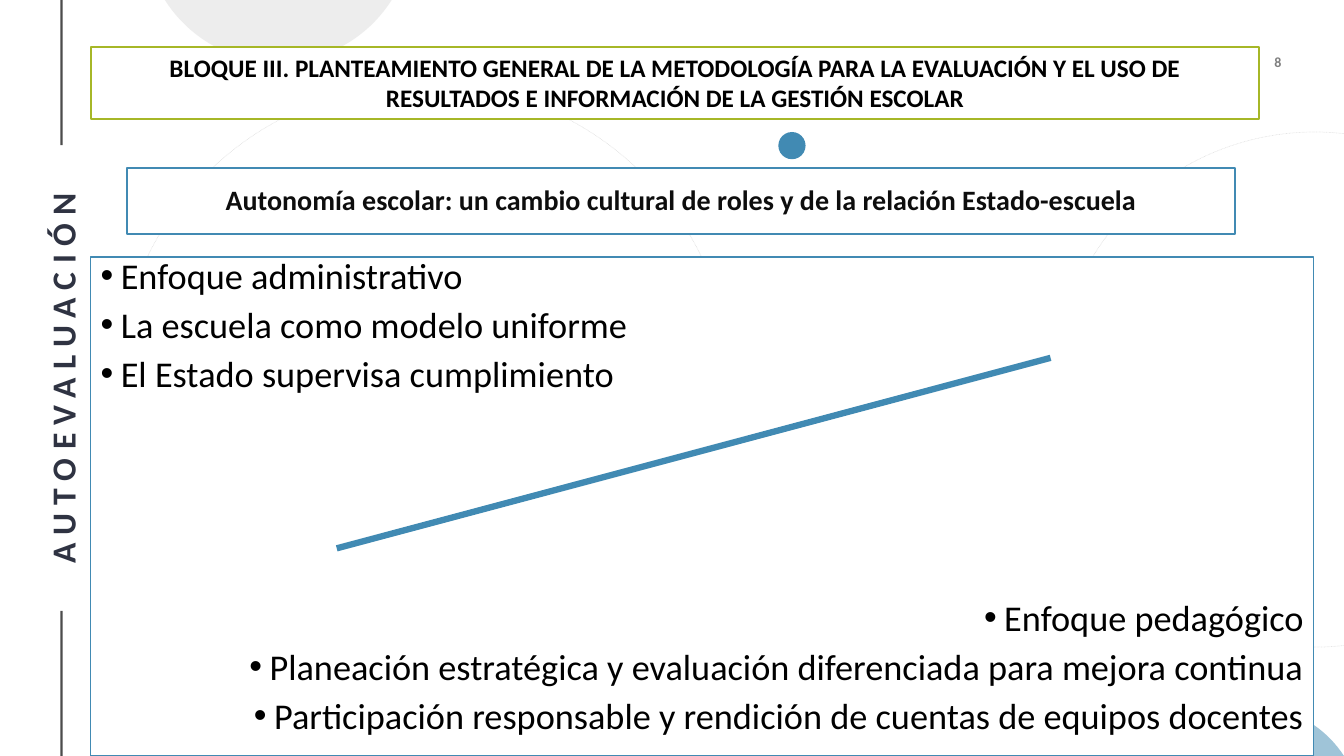
import math
import lxml.etree
import pptx
import pptx.util
import pptx.dml.color
import pptx.enum.dml
import pptx.enum.shapes
import pptx.enum.text
import pptx.oxml.ns

W, H = 13.33, 7.5
FONT = "Calibri"
BLACK, WHITE, BLUE, GREEN, GREY = "000000", "FFFFFF", "418AB3", "A6B727", "DDDDDD"

BLOCK = ("BLOQUE III. PLANTEAMIENTO GENERAL DE LA METODOLOGÍA PARA LA EVALUACIÓN Y EL USO DE "
         "RESULTADOS E INFORMACIÓN DE LA GESTIÓN ESCOLAR")
TITLE = "Autonomía escolar: un cambio cultural de roles y de la relación Estado-escuela"
BEFORE = ["Enfoque administrativo", "La escuela como modelo uniforme", "El Estado supervisa cumplimiento"]
AFTER = ["Enfoque pedagógico",
         "Planeación estratégica y evaluación diferenciada para mejora continua",
         "Participación responsable y rendición de cuentas de equipos docentes"]
SIDEBAR, PAGE = "AUTOEVALUACIÓN", "8"

RAIL_X = 0.61
RAILS = [(RAIL_X, 6.06, RAIL_X, H), (RAIL_X, 0, RAIL_X, 1.44)]
RINGS = [(10.47, 1.31, 5.14, 5.11), (1.16, 0.83, 6.1, 6.07)]
CAPS = [(12.41, H, 1.84, -0.5, BLUE), (2.76, 0, 2.25, 0.62, GREY)]
ITEM_GAP, GROUP_GAP = 10, 149.4

SHAPE = pptx.enum.shapes.MSO_SHAPE
ALIGN = pptx.enum.text.PP_ALIGN
ANCHOR = pptx.enum.text.MSO_ANCHOR
FIT = pptx.enum.text.MSO_AUTO_SIZE.SHAPE_TO_FIT_TEXT
qn = pptx.oxml.ns.qn
inch = pptx.util.Inches

prs = pptx.Presentation()
prs.slide_width, prs.slide_height = inch(W), inch(H)
s = prs.slides.add_slide(prs.slide_layouts[6])


def paint(fmt, color, alpha=100):
    fmt.solid()
    fmt.fore_color.rgb = pptx.dml.color.RGBColor.from_string(color)
    if alpha < 100:
        clr = fmt._xPr.find(qn("a:solidFill"))[0]
        lxml.etree.SubElement(clr, qn("a:alpha")).set("val", str(alpha * 1000))


def style(sp, fill=None, line=None, width=1, fill_alpha=100, line_alpha=100):
    sp.shadow.inherit = False
    if fill:
        paint(sp.fill, fill, fill_alpha)
    else:
        sp.fill.background()
    if line:
        paint(sp.line.fill, line, line_alpha)
        sp.line.width = pptx.util.Pt(width)
    else:
        sp.line.fill.background()


def add_shape(kind, box, **fmt):
    sp = s.shapes.add_shape(kind, *map(inch, box))
    style(sp, **fmt)
    return sp


def add_line(ends, color, width, alpha=100):
    c = s.shapes.add_connector(pptx.enum.shapes.MSO_CONNECTOR.STRAIGHT, *map(inch, ends))
    paint(c.line.fill, color, alpha)
    c.line.width = pptx.util.Pt(width)
    lxml.etree.SubElement(c._element.spPr, qn("a:effectLst"))


def add_cap(cx, base, chord, height, color):
    rise = abs(height)
    radius = (chord ** 2 / 4 + rise ** 2) / (2 * rise)
    half = math.asin(chord / 2 / radius)
    angles = [half * (i / 20 - 1) for i in range(41)]
    side = math.copysign(1, height)
    points = [(inch(cx + radius * math.sin(a)),
               inch(base + side * (radius * math.cos(a) - radius + rise))) for a in angles]
    fb = s.shapes.build_freeform(*points[0])
    fb.add_line_segments(points[1:], close=True)
    style(fb.convert_to_shape(), fill=color, fill_alpha=50)


def frame(sp, anchor=ANCHOR.MIDDLE, inset=None):
    tf = sp.text_frame
    tf.word_wrap = True
    tf.vertical_anchor = anchor
    if inset is not None:
        tf.margin_left = tf.margin_right = tf.margin_top = tf.margin_bottom = inch(inset)
    return tf


def write(p, text, size, color=BLACK, bold=False, align=ALIGN.CENTER, spacing=None,
          before=0, bullet=False, tracking=0, alpha=100):
    p.alignment = align
    p.space_before = pptx.util.Pt(before)
    if spacing:
        p.line_spacing = spacing
    if bullet:
        pPr = p._p.get_or_add_pPr()
        pPr.set("marL", str(inch(0.2)))
        pPr.set("indent", str(-inch(0.2)))
        lxml.etree.SubElement(pPr, qn("a:buFont")).set("typeface", "Arial")
        lxml.etree.SubElement(pPr, qn("a:buChar")).set("char", "•")
    r = p.add_run()
    r.text = text
    r.font.name, r.font.size, r.font.bold = FONT, pptx.util.Pt(size), bold
    paint(r.font.fill, color, alpha)
    if tracking:
        r.font._element.set("spc", str(tracking * 100))


for ends in RAILS:
    add_line(ends, BLACK, 1.5, alpha=70)

sp = s.shapes.add_textbox(*map(inch, (-1.69, 3.53, 4.61, 0.45)))
sp.rotation = 270
write(frame(sp, inset=0.02).paragraphs[0], SIDEBAR, 24, "2F3342", bold=True, tracking=6)

sp = s.shapes.add_textbox(*map(inch, (11.94, 0.48, 0.77, 0.27)))
write(frame(sp, inset=0).paragraphs[0], PAGE, 10, bold=True, align=ALIGN.RIGHT, alpha=50)

for box in RINGS:
    sp = add_shape(SHAPE.OVAL, box, line=BLACK, width=0.5, line_alpha=10)
    sp.line.dash_style = pptx.enum.dml.MSO_LINE.ROUND_DOT
add_shape(SHAPE.OVAL, (7.72, 1.31, 0.27, 0.27), fill=BLUE)
for cap in CAPS:
    add_cap(*cap)

tf = frame(add_shape(SHAPE.RECTANGLE, (0.9, 2.55, 12.13, 4.95), fill=WHITE, line=BLUE), ANCHOR.TOP)
for items, align, first_gap in ((BEFORE, ALIGN.LEFT, 0), (AFTER, ALIGN.RIGHT, GROUP_GAP)):
    for i, item in enumerate(items):
        p = tf.add_paragraph() if i or first_gap else tf.paragraphs[0]
        write(p, item, 25.9, align=align, spacing=0.8, bullet=True,
              before=ITEM_GAP if i else first_gap)

sp = add_shape(SHAPE.RECTANGLE, (1.26, 1.67, 10.99, 0.65), fill=WHITE, line=BLUE, width=1.5)
write(frame(sp).paragraphs[0], TITLE, 20, "0D0D0D", bold=True, spacing=0.9)

add_line((3.34, 5.44, 10.42, 3.55), BLUE, 4.5)

sp = add_shape(SHAPE.RECTANGLE, (0.9, 0.47, 11.59, 0.71), fill=WHITE, line=GREEN, width=1.5)
tf = frame(sp, ANCHOR.TOP)
tf.auto_size = FIT
write(tf.paragraphs[0], BLOCK, 18, bold=True)

prs.save("out.pptx")
